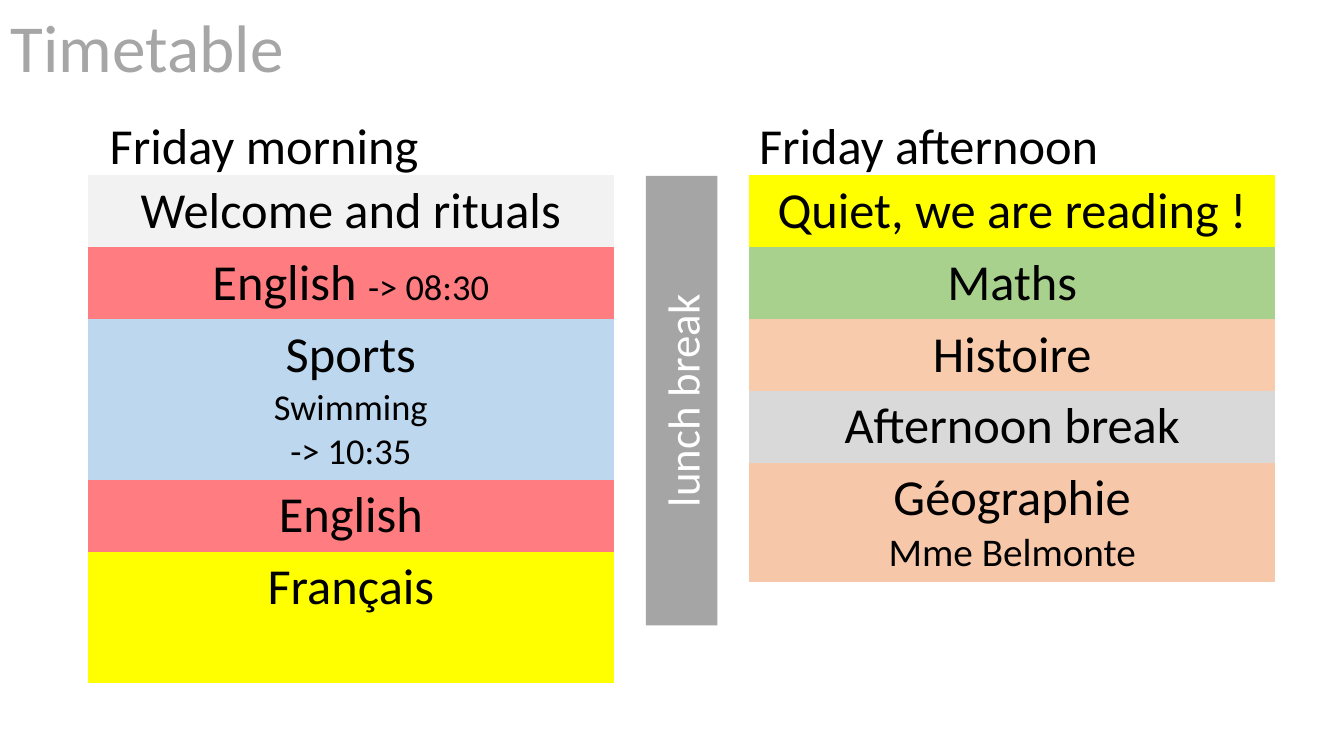
"""Build the Friday timetable slide."""
from pptx import Presentation
from pptx.dml.color import RGBColor
from pptx.enum.shapes import MSO_SHAPE
from pptx.enum.text import MSO_ANCHOR, MSO_AUTO_SIZE, PP_ALIGN
from pptx.util import Pt

SCALE = 9144
FONT = "Calibri"
BLOCK = MSO_SHAPE.RECTANGLE
TOP, MIDDLE = MSO_ANCHOR.TOP, MSO_ANCHOR.MIDDLE
LEFT, CENTER = PP_ALIGN.LEFT, PP_ALIGN.CENTER
FIXED = MSO_AUTO_SIZE.NONE
PLAIN = "{2D5ABB26-0587-4C30-8999-92F81FD0307C}"

BLACK = RGBColor(0x00, 0x00, 0x00)
WHITE = RGBColor(0xFF, 0xFF, 0xFF)
SILVER = RGBColor(0xA6, 0xA6, 0xA6)
GRAY = RGBColor(0xA5, 0xA5, 0xA5)
PALE = RGBColor(0xF2, 0xF2, 0xF2)
LIGHT = RGBColor(0xD9, 0xD9, 0xD9)
RED = RGBColor(0xFF, 0x7C, 0x80)
BLUE = RGBColor(0xBD, 0xD7, 0xEE)
YELLOW = RGBColor(0xFF, 0xFF, 0x00)
GREEN = RGBColor(0xA9, 0xD1, 0x8E)
PEACH = RGBColor(0xF8, 0xCB, 0xAD)
SALMON = RGBColor(0xF7, 0xC7, 0xAA)

BIG, MID, SMALL = 36, 28, 26
ROW, WIDE, START = 70, 522, 174

MORNING = [
    (PALE, ROW, [[("Welcome and rituals", BIG)]]),
    (RED, ROW, [[("English ", BIG), ("-> 08:30", SMALL)]]),
    (BLUE, 157, [[("Sports", BIG)], [("Swimming", SMALL)], [("-> 10:35", SMALL)]]),
    (RED, ROW, [[("English", BIG)]]),
    (YELLOW, 130, [[("Français", BIG)]]),
]
AFTERNOON = [
    (YELLOW, ROW, [[("Quiet, we are reading !", BIG)]]),
    (GREEN, ROW, [[("Maths", BIG)]]),
    (PEACH, ROW, [[("Histoire", BIG)]]),
    (LIGHT, ROW, [[("Afternoon break", BIG)]]),
    (SALMON, 117, [[("Géographie", BIG)], [("Mme Belmonte", MID)]]),
]


def px(*sizes):
    """Turn px lengths into EMU."""
    return [size * SCALE for size in sizes]


class Page:
    """Hold the slide and its text style."""

    def __init__(self, deck):
        """Add a title-only slide."""
        self.slide = deck.slides.add_slide(deck.slide_layouts[5])
        self.shapes = self.slide.shapes

    def style(self, run, size, color):
        """Format one run."""
        run.font.name = FONT
        run.font.size = Pt(size)
        run.font.color.rgb = color

    def letter(self, shape, text, size, color, align, anchor, wrap):
        """Fill a shape with one line of text."""
        frame = shape.text_frame
        frame.text = text
        frame.auto_size = FIXED
        frame.word_wrap = wrap
        frame.vertical_anchor = anchor
        line = frame.paragraphs[0]
        line.alignment = align
        self.style(line.runs[0], size, color)

    def title(self, text, x, y, w, h):
        """Place the slide title."""
        head = self.shapes.title
        head.left, head.top, head.width, head.height = px(x, y, w, h)
        self.letter(head, text, 48, SILVER, CENTER, TOP, False)

    def label(self, text, x, y, w, h):
        """Add a heading above a table."""
        box = self.shapes.add_textbox(*px(x, y, w, h))
        self.letter(box, text, BIG, BLACK, LEFT, TOP, True)

    def bar(self, text, x, y, w, h):
        """Add a block turned to read upwards."""
        bar = self.shapes.add_shape(BLOCK, *px(x, y, w, h))
        bar.rotation = 270
        bar.shadow.inherit = False
        bar.fill.solid()
        bar.fill.fore_color.rgb = GRAY
        bar.line.fill.background()
        self.letter(bar, text, 32, WHITE, CENTER, MIDDLE, True)

    def table(self, rows, x, y, w):
        """Add a one-column table of lessons."""
        high = sum(row[1] for row in rows)
        table = self.shapes.add_table(len(rows), 1, *px(x, y, w, high)).table
        table.first_row = table.horz_banding = False
        table._tbl.tblPr.find("{*}tableStyleId").text = PLAIN
        for index, (fill, tall, lines) in enumerate(rows):
            table.rows[index].height = tall * SCALE
            cell = table.cell(index, 0)
            cell.fill.solid()
            cell.fill.fore_color.rgb = fill
            self.lines(cell.text_frame, lines)

    def lines(self, frame, lines):
        """Set centred paragraphs of sized runs."""
        frame.text = "\n".join(line[0][0] for line in lines)
        for para, line in zip(frame.paragraphs, lines):
            para.alignment = CENTER
            for text, _ in line[1:]:
                para.add_run().text = text
            for run, (_, size) in zip(para.runs, line):
                self.style(run, size, BLACK)


def main():
    """Build and save the deck."""
    deck = Presentation()
    deck.slide_width, deck.slide_height = px(1333, 750)
    page = Page(deck)
    page.title("Timetable", 0, 0, 292, 90)
    page.label("Friday morning", 99, 108, 327, 70)
    page.label("Friday afternoon", 743, 108, 563, 70)
    page.bar("lunch break", 453, 362, 446, 71)
    page.table(MORNING, 87, START, WIDE)
    page.table(AFTERNOON, 743, START, WIDE)
    deck.save("out.pptx")


if __name__ == "__main__":
    main()
